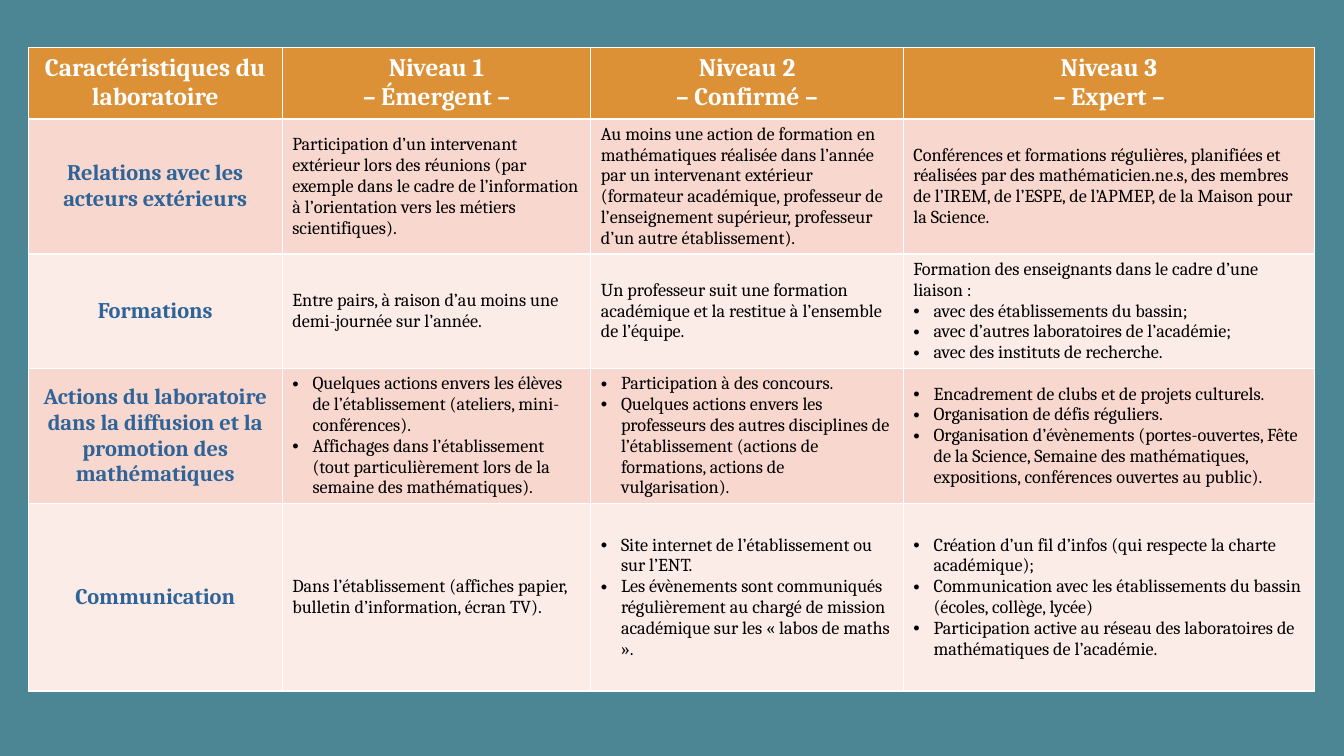
"""Build the slide that grades a mathematics laboratory on three levels."""
from dataclasses import dataclass

from lxml.etree import SubElement
from pptx import Presentation
from pptx.dml.color import RGBColor
from pptx.enum.text import MSO_ANCHOR, PP_ALIGN
from pptx.oxml.ns import qn
from pptx.util import Inches, Pt


@dataclass(frozen=True)
class Theme:
    font: str = "Cambria"
    backdrop: str = "4C8694"
    header_fill: str = "DC9136"
    bands: tuple = ("F8D7CE", "FCECE8")
    header_ink: str = "FFFFFF"
    criterion_ink: str = "2F6498"
    body_ink: str = "000000"
    header_size: int = 18
    criterion_size: int = 16
    body_size: int = 13


THEME = Theme()
BULLET = "• "
BULLET_INDENT = Inches(0.2)
COLUMN_WIDTHS = (2.52, 3.06, 3.1, 4.08)
ROW_HEIGHTS = (0.71, 1.28, 1.08, 1.28, 1.86)

FORMATS = {
    "header": {"size": Pt(THEME.header_size), "bold": True, "ink": THEME.header_ink, "alignment": PP_ALIGN.CENTER},
    "criterion": {"size": Pt(THEME.criterion_size), "bold": True, "ink": THEME.criterion_ink,
                  "alignment": PP_ALIGN.CENTER},
    "body": {"size": Pt(THEME.body_size), "bold": False, "ink": THEME.body_ink, "alignment": PP_ALIGN.LEFT},
}

LEVELS = [
    [
        "Caractéristiques du laboratoire",
        "Niveau 1\n– Émergent –",
        "Niveau 2\n– Confirmé –",
        "Niveau 3\n– Expert –",
    ],
    [
        "Relations avec les acteurs extérieurs",
        "Participation d’un intervenant extérieur lors des réunions (par exemple dans le cadre "
        "de l’information à l’orientation vers les métiers scientifiques).",
        "Au moins une action de formation en mathématiques réalisée dans l’année par un intervenant "
        "extérieur (formateur académique, professeur de l’enseignement supérieur, professeur "
        "d’un autre établissement).",
        "Conférences et formations régulières, planifiées et réalisées par des mathématicien.ne.s, "
        "des membres de l’IREM, de l’ESPE, de l’APMEP, de la Maison pour la Science.",
    ],
    [
        "Formations",
        "Entre pairs, à raison d’au moins une demi-journée sur l’année.",
        "Un professeur suit une formation académique et la restitue à l’ensemble de l’équipe.",
        "Formation des enseignants dans le cadre d’une liaison :\n"
        "• avec des établissements du bassin;\n"
        "• avec d’autres laboratoires de l’académie;\n"
        "• avec des instituts de recherche.",
    ],
    [
        "Actions du laboratoire dans la diffusion et la promotion des mathématiques",
        "• Quelques actions envers les élèves de l’établissement (ateliers, mini-conférences).\n"
        "• Affichages dans l’établissement (tout particulièrement lors de la semaine des mathématiques).",
        "• Participation à des concours.\n"
        "• Quelques actions envers les professeurs des autres disciplines de l’établissement "
        "(actions de formations, actions de vulgarisation).",
        "• Encadrement de clubs et de projets culturels.\n"
        "• Organisation de défis réguliers.\n"
        "• Organisation d’évènements (portes-ouvertes, Fête de la Science, Semaine des mathématiques, "
        "expositions, conférences ouvertes au public).",
    ],
    [
        "Communication",
        "Dans l’établissement (affiches papier, bulletin d’information, écran TV).",
        "• Site internet de l’établissement ou sur l’ENT.\n"
        "• Les évènements sont communiqués régulièrement au chargé de mission académique "
        "sur les « labos de maths ».",
        "• Création d’un fil d’infos (qui respecte la charte académique);\n"
        "• Communication avec les établissements du bassin (écoles, collège, lycée)\n"
        "• Participation active au réseau des laboratoires de mathématiques de l’académie.",
    ],
]


def add_bullet(paragraph):
    properties = paragraph._p.get_or_add_pPr()
    properties.set("marL", str(BULLET_INDENT))
    properties.set("indent", str(-BULLET_INDENT))
    SubElement(properties, qn("a:buFont"), typeface="Arial")
    SubElement(properties, qn("a:buChar"), char=BULLET.strip())


def write_cell(cell, text, role, fill):
    cell.fill.solid()
    cell.fill.fore_color.rgb = RGBColor.from_string(fill)
    cell.vertical_anchor = MSO_ANCHOR.MIDDLE
    cell.text = text.replace(BULLET, "")
    look = FORMATS[role]
    for paragraph, line in zip(cell.text_frame.paragraphs, text.split("\n")):
        paragraph.alignment = look["alignment"]
        if line.startswith(BULLET):
            add_bullet(paragraph)
        font = paragraph.runs[0].font
        font.name = THEME.font
        font.color.rgb = RGBColor.from_string(look["ink"])
        for attribute in ("size", "bold"):
            setattr(font, attribute, look[attribute])


deck = Presentation()
deck.slide_width, deck.slide_height = Inches(13.33), Inches(7.5)
slide = deck.slides.add_slide(deck.slide_layouts[6])
slide.background.fill.solid()
slide.background.fill.fore_color.rgb = RGBColor.from_string(THEME.backdrop)

grid = slide.shapes.add_table(
    len(ROW_HEIGHTS), len(COLUMN_WIDTHS), Inches(0.28), Inches(0.47),
    Inches(sum(COLUMN_WIDTHS)), Inches(sum(ROW_HEIGHTS)),
).table
for column, width in zip(grid.columns, COLUMN_WIDTHS):
    column.width = Inches(width)
for row, height in zip(grid.rows, ROW_HEIGHTS):
    row.height = Inches(height)

for level, texts in enumerate(LEVELS):
    fill = THEME.bands[(level - 1) % 2] if level else THEME.header_fill
    for position, text in enumerate(texts):
        role = "header" if level == 0 else "body" if position else "criterion"
        write_cell(grid.cell(level, position), text, role, fill)

deck.save("out.pptx")
